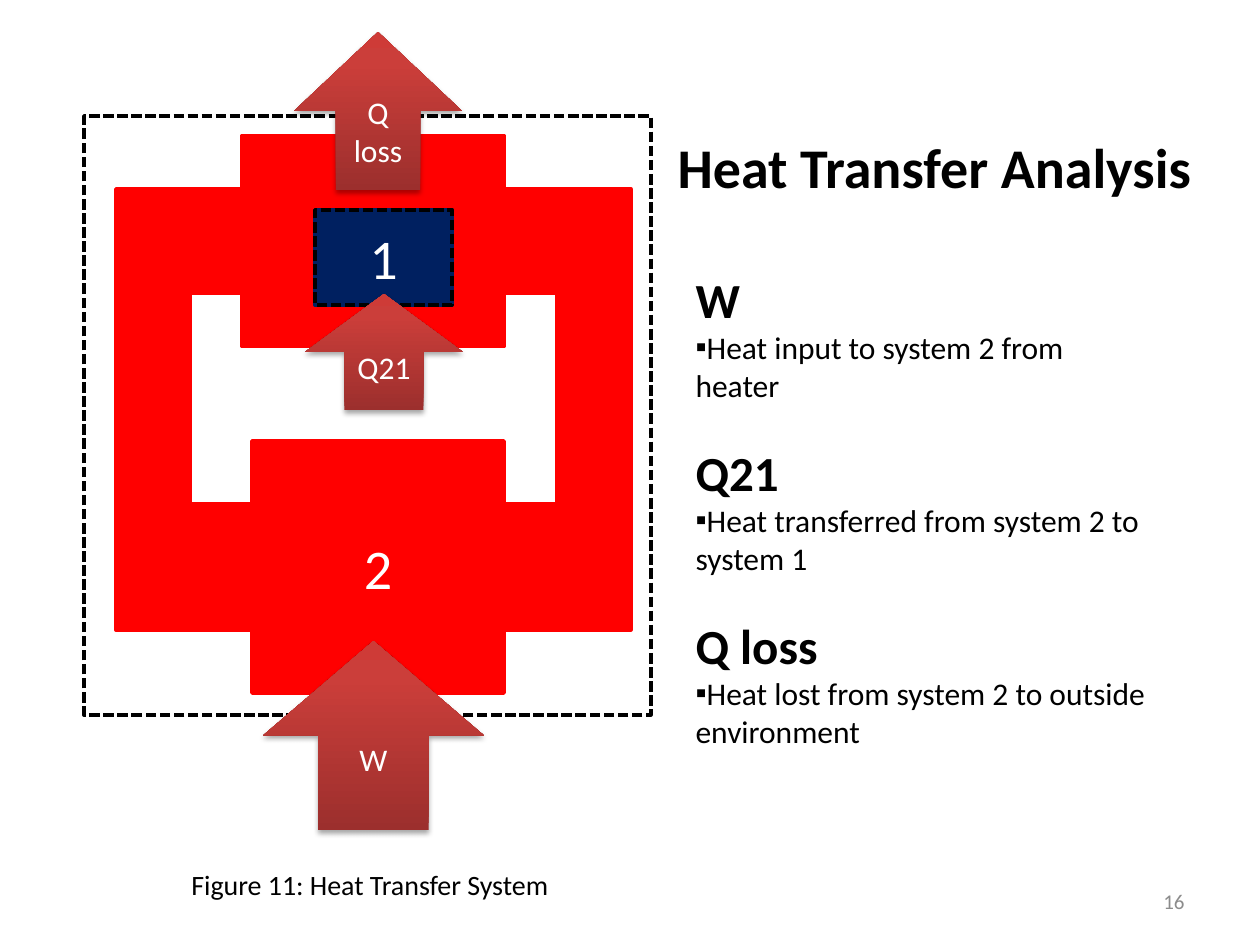
from dataclasses import dataclass

from pptx import Presentation
from pptx.dml.color import RGBColor as RGB
from pptx.enum.dml import MSO_LINE as DASH
from pptx.enum.shapes import MSO_SHAPE as SHAPE
from pptx.enum.text import MSO_ANCHOR as ANCHOR, MSO_AUTO_SIZE as AUTO, PP_ALIGN as ALIGN
from pptx.oxml import parse_xml
from pptx.oxml.ns import nsdecls, qn
from pptx.util import Pt

EMU_PER_PX = 914400 / 126


@dataclass(frozen=True)
class Theme:
    font: str = "Calibri"
    black: str = "000000"
    white: str = "FFFFFF"
    gray: str = "8C8C8C"
    hot: str = "FF0000"
    cold: str = "002060"
    arrow: tuple = ((0, "9C2F2D"), (80, "CB3E3A"), (100, "CE3B37"))
    title: int = 32
    heading: int = 28
    body: int = 18
    caption: int = 16
    number: int = 12
    line: int = 2


T = Theme()

INNER_BOX = (315, 210, 137, 95)
OUTER_BOX = (84, 116, 567, 599)
SIDE_TOP, SIDE_W, SIDE_H = 189, 74, 441
SIDE_LEFTS = (116, 557)
ARROWS = (
    ((263, 641, 221, 189), ("W",)),
    ((294, 32, 168, 158), ("Q", "loss")),
    ((305, 294, 158, 116), ("Q21",)),
)
TERMS = (
    ("W", "Heat input to system 2 from heater"),
    ("Q21", "Heat transferred from system 2 to system 1"),
    ("Q loss", "Heat lost from system 2 to outside environment"),
)


def px(*values):
    return [round(v * EMU_PER_PX) for v in values]


def apply(obj, **fmt):
    for name, value in fmt.items():
        setattr(obj, name, value)


def write(p, text, size, color, bold=False, **para):
    apply(p, **para)
    r = p.add_run()
    r.text = text
    apply(r.font, name=T.font, size=Pt(size), bold=bold)
    r.font.color.rgb = RGB.from_string(color)


def write_lines(tf, lines, size, color, **fmt):
    for i, line in enumerate(lines):
        p = tf.paragraphs[0] if i == 0 else tf.add_paragraph()
        write(p, line, size, color, **fmt)


def add_block(slide, kind, box, fill=None, dash=None, label=None):
    sp = slide.shapes.add_shape(kind, *px(*box))
    sp.shadow.inherit = False
    if fill:
        sp.fill.solid()
        sp.fill.fore_color.rgb = RGB.from_string(fill)
    else:
        sp.fill.background()
    sp.line.color.rgb = RGB.from_string(fill or T.black)
    apply(sp.line, width=Pt(T.line), dash_style=dash)
    if label:
        write_lines(sp.text_frame, [label], T.title, T.white, alignment=ALIGN.CENTER)


def add_heat_arrow(slide, box, lines):
    sp = slide.shapes.add_shape(SHAPE.UP_ARROW, *px(*box))
    sp.line.fill.background()
    sp.fill.gradient()
    sp.fill.gradient_angle = 90
    sp.shadow.inherit = False
    spPr = sp._element.spPr
    stops = spPr.find(".//" + qn("a:gsLst"))
    for gs in list(stops):
        stops.remove(gs)
    for pos, color in T.arrow:
        stops.append(parse_xml(
            f'<a:gs {nsdecls("a")} pos="{pos * 1000}"><a:srgbClr val="{color}"/></a:gs>'))
    spPr.find(qn("a:effectLst")).append(parse_xml(
        f'<a:outerShdw {nsdecls("a")} blurRad="{Pt(3.1)}" dist="{Pt(1.8)}" dir="5400000" '
        f'rotWithShape="0"><a:srgbClr val="{T.black}"><a:alpha val="35000"/>'
        '</a:srgbClr></a:outerShdw>'))
    write_lines(sp.text_frame, lines, T.body, T.white, alignment=ALIGN.CENTER)


def add_label(slide, box, text, size, color, anchor=ANCHOR.TOP, align=ALIGN.LEFT):
    tf = slide.shapes.add_textbox(*px(*box)).text_frame
    apply(tf, word_wrap=True, vertical_anchor=anchor)
    write_lines(tf, [text], size, color, alignment=align)


def place(sp, box):
    apply(sp, **dict(zip(("left", "top", "width", "height"), px(*box))))
    apply(sp.text_frame, word_wrap=True, auto_size=AUTO.NONE, vertical_anchor=ANCHOR.TOP)
    return sp.text_frame


def set_bullet(p, char=None):
    pPr = p._p.get_or_add_pPr()
    pPr.set("marL", "0")
    pPr.set("indent", "0")
    bullet = f'<a:buChar {nsdecls("a")} char="{char}"/>' if char else f'<a:buNone {nsdecls("a")}/>'
    pPr.append(parse_xml(bullet))


def fill_terms(tf):
    for i, (term, meaning) in enumerate(TERMS):
        p = tf.paragraphs[0] if i == 0 else tf.add_paragraph()
        write(p, term, T.heading, T.black, bold=True, space_before=Pt(22 if i else 0))
        set_bullet(p)
        p = tf.add_paragraph()
        write(p, meaning, T.body, T.black, space_before=Pt(0))
        set_bullet(p, "▪")


def main():
    prs = Presentation()
    prs.slide_width, prs.slide_height = px(1260, 945)
    slide = prs.slides.add_slide(prs.slide_layouts[1])
    title, body = slide.placeholders

    add_block(slide, SHAPE.CROSS, (189, 136, 368, 210), T.hot)
    add_block(slide, SHAPE.CROSS, (189, 441, 378, 252), T.hot, label="2")
    for left in SIDE_LEFTS:
        add_block(slide, SHAPE.RECTANGLE, (left, SIDE_TOP, SIDE_W, SIDE_H), T.hot)
    add_block(slide, SHAPE.RECTANGLE, INNER_BOX, T.cold, label="1")
    for box in (OUTER_BOX, INNER_BOX):
        add_block(slide, SHAPE.RECTANGLE, box, dash=DASH.SQUARE_DOT)
    for box, lines in ARROWS:
        add_heat_arrow(slide, box, lines)

    write_lines(place(title, (630, 126, 609, 81)), ["Heat Transfer Analysis"],
                T.title, T.black, bold=True, alignment=ALIGN.CENTER)
    fill_terms(place(body, (683, 263, 483, 496)))
    add_label(slide, (179, 861, 420, 47), "Figure 11: Heat Transfer System", T.caption, T.black)
    add_label(slide, (903, 876, 294, 50), "16", T.number, T.gray, ANCHOR.MIDDLE, ALIGN.RIGHT)
    prs.save("out.pptx")


if __name__ == "__main__":
    main()
